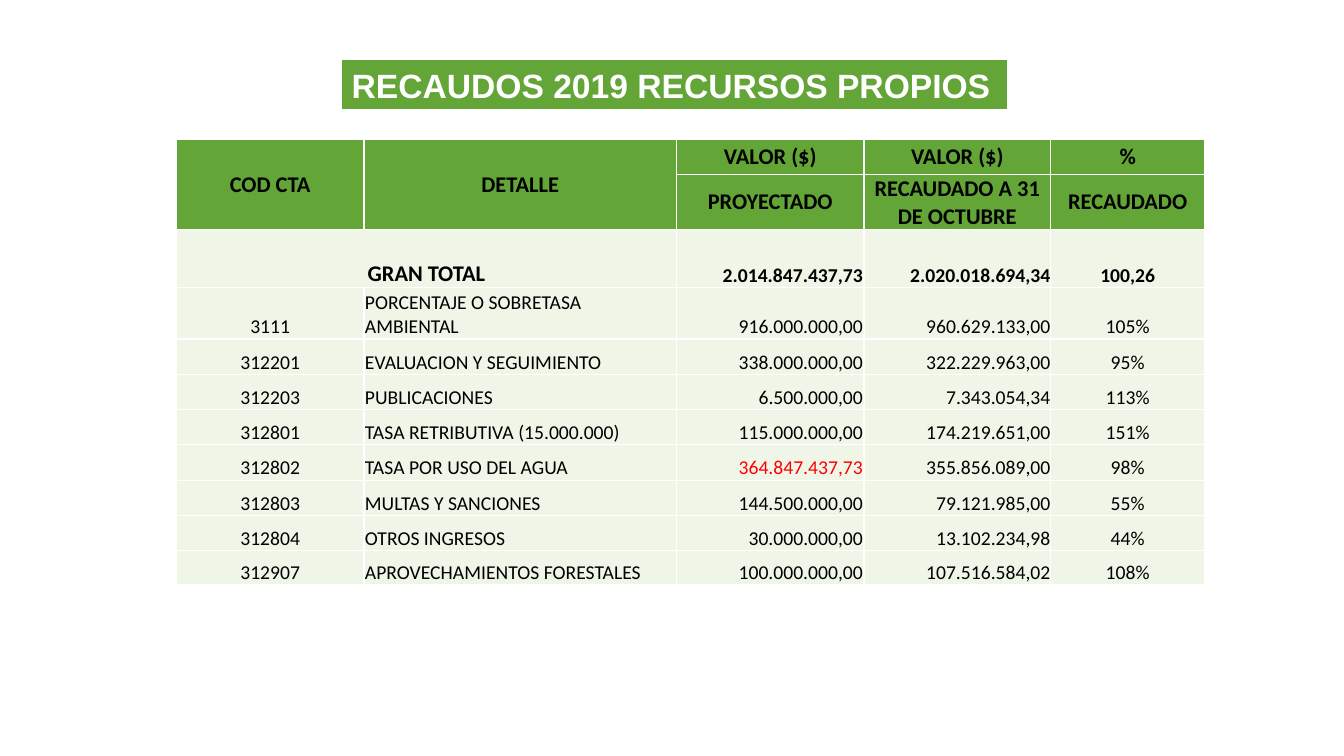
import pptx
import pptx.util
import pptx.dml.color
import pptx.enum.shapes
import pptx.enum.text
import pptx.oxml
import pptx.oxml.ns
from dataclasses import dataclass

Inches = pptx.util.Inches
Align = pptx.enum.text.PP_ALIGN
Anchor = pptx.enum.text.MSO_ANCHOR


@dataclass(frozen=True)
class Theme:
    green: str = "63A537"
    pale: str = "EFF6E8"
    white: str = "FFFFFF"
    black: str = "000000"
    red: str = "FF0000"
    title_font: str = "Arial"
    table_font: str = "Calibri"
    title_size: int = 24
    header_size: int = 16
    body_size: int = 14


theme = Theme()


def color(value):
    return pptx.dml.color.RGBColor.from_string(value)


def write(frame, text, size=theme.body_size, font=theme.table_font,
          ink=theme.black, bold=False, align=Align.LEFT):
    para = frame.paragraphs[0]
    para.alignment = align
    span = para.add_run()
    span.text = text
    span.font.size = pptx.util.Pt(size)
    span.font.name = font
    span.font.bold = bold
    span.font.color.rgb = color(ink)


deck = pptx.Presentation()
deck.slide_width, deck.slide_height = Inches(13.33), Inches(7.5)
page = deck.slides.add_slide(deck.slide_layouts[6])

# Title banner
banner = page.shapes.add_shape(pptx.enum.shapes.MSO_SHAPE.RECTANGLE,
                               Inches(3.39), Inches(0.59), Inches(6.6), Inches(0.5))
banner.shadow.inherit = False
banner.fill.solid()
banner.fill.fore_color.rgb = color(theme.green)
banner.line.color.rgb = color(theme.white)
banner.line.width = pptx.util.Pt(0.75)
banner.text_frame.word_wrap = False
banner.text_frame.auto_size = pptx.enum.text.MSO_AUTO_SIZE.SHAPE_TO_FIT_TEXT
banner.text_frame.vertical_anchor = Anchor.TOP
write(banner.text_frame, "RECAUDOS 2019 RECURSOS PROPIOS", size=theme.title_size,
      font=theme.title_font, ink=theme.white, bold=True)

# Table contents: two header rows, the grand total, then the accounts
rows = [
    ("COD CTA", "DETALLE", "VALOR ($)", "VALOR ($)", "%"),
    ("", "", "PROYECTADO", "RECAUDADO A 31 DE OCTUBRE", "RECAUDADO"),
    ("GRAN TOTAL", "", "2.014.847.437,73", "2.020.018.694,34", "100,26"),
    ("3111", "PORCENTAJE O SOBRETASA AMBIENTAL", "916.000.000,00", "960.629.133,00", "105%"),
    ("312201", "EVALUACION Y SEGUIMIENTO", "338.000.000,00", "322.229.963,00", "95%"),
    ("312203", "PUBLICACIONES", "6.500.000,00", "7.343.054,34", "113%"),
    ("312801", "TASA RETRIBUTIVA (15.000.000)", "115.000.000,00", "174.219.651,00", "151%"),
    ("312802", "TASA POR USO DEL AGUA", "364.847.437,73", "355.856.089,00", "98%"),
    ("312803", "MULTAS Y SANCIONES", "144.500.000,00", "79.121.985,00", "55%"),
    ("312804", "OTROS INGRESOS", "30.000.000,00", "13.102.234,98", "44%"),
    ("312907", "APROVECHAMIENTOS FORESTALES", "100.000.000,00", "107.516.584,02", "108%"),
]
header_rows, total_row = 2, 2
highlighted = (7, 2)
column_widths = [1.86, 3.1, 1.86, 1.85, 1.53]
row_heights = [0.35, 0.33, 0.58, 0.51] + [0.35] * 6 + [0.34]
body_aligns = [Align.CENTER, Align.LEFT, Align.RIGHT, Align.RIGHT, Align.CENTER]

# Table grid
table = page.shapes.add_table(len(rows), len(column_widths), Inches(1.75), Inches(1.38),
                              Inches(10.2), Inches(4.45)).table
for column, width in zip(table.columns, column_widths):
    column.width = Inches(width)
for row, height in zip(table.rows, row_heights):
    row.height = Inches(height)
for column in (0, 1):
    table.cell(0, column).merge(table.cell(1, column))
table.cell(total_row, 0).merge(table.cell(total_row, 1))

# Cells
for r, texts in enumerate(rows):
    for c, text in enumerate(texts):
        cell = table.cell(r, c)
        is_header = r < header_rows
        inset = 0 if r >= total_row and c >= 3 else 0.01
        cell.margin_left = cell.margin_right = cell.margin_top = Inches(inset)
        cell.margin_bottom = 0
        cell.vertical_anchor = Anchor.MIDDLE if is_header else Anchor.BOTTOM

        # Borders come before the fill in the cell properties
        properties = cell._tc.get_or_add_tcPr()
        for side in ("lnL", "lnR", "lnT", "lnB"):
            properties.append(pptx.oxml.parse_xml(
                f'<a:{side} {pptx.oxml.ns.nsdecls("a")} w="12700"><a:solidFill>'
                f'<a:srgbClr val="{theme.white}"/></a:solidFill></a:{side}>'))
        cell.fill.solid()
        cell.fill.fore_color.rgb = color(theme.green if is_header else theme.pale)

        if text:
            large = is_header or (r, c) == (total_row, 0)
            write(cell.text_frame, text,
                  size=theme.header_size if large else theme.body_size,
                  ink=theme.red if (r, c) == highlighted else theme.black,
                  bold=r <= total_row,
                  align=Align.CENTER if is_header else body_aligns[c])

deck.save("out.pptx")
